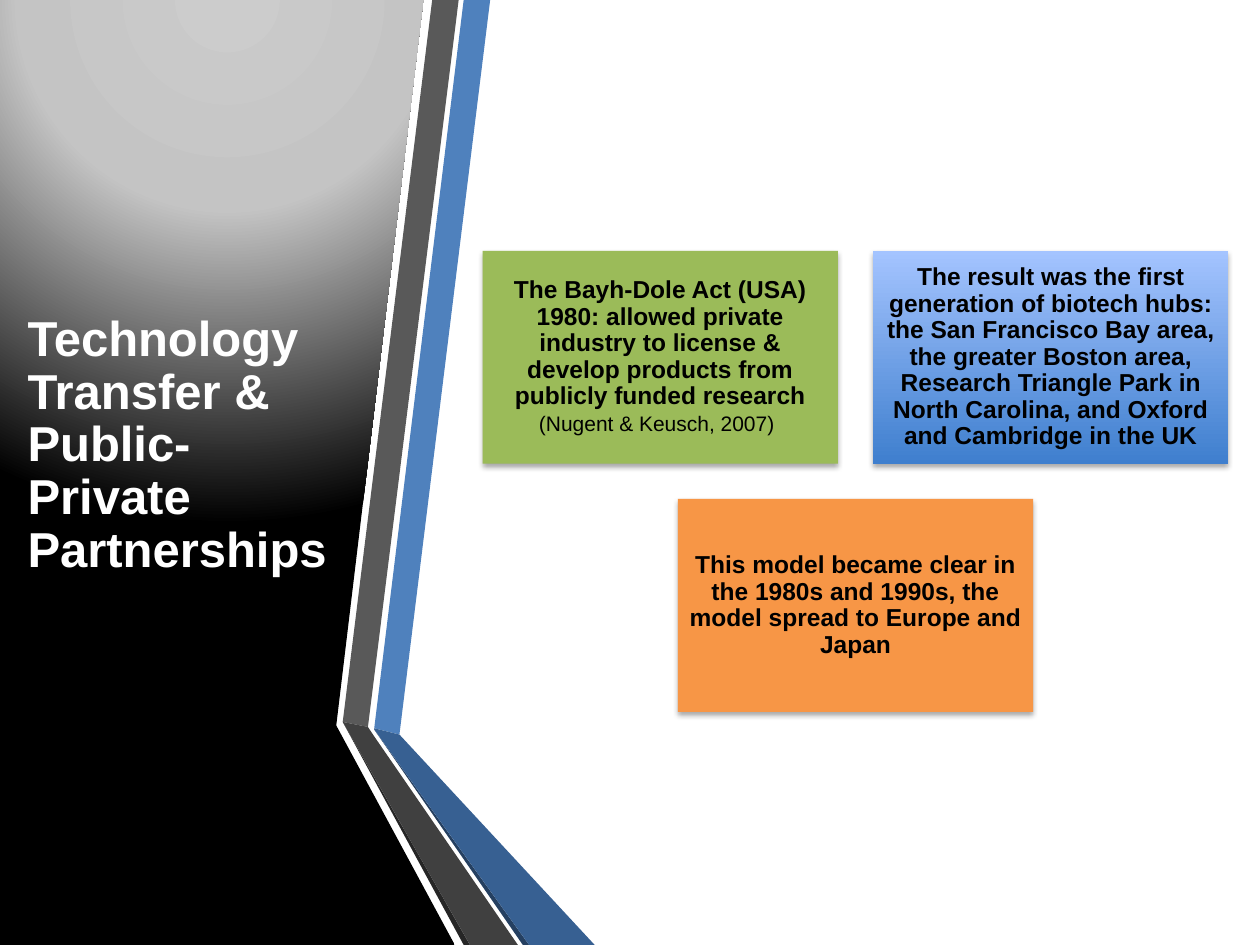
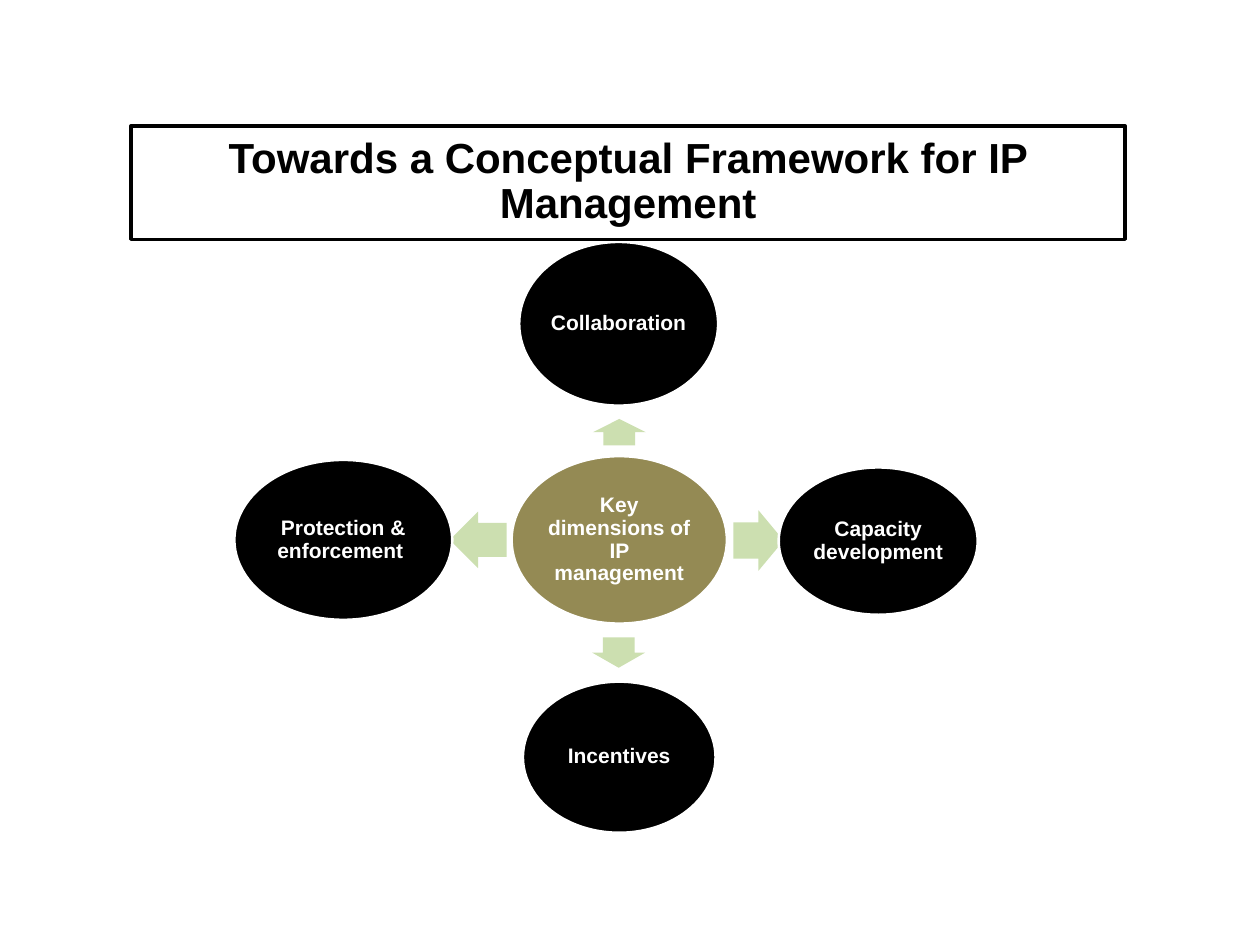
from dataclasses import dataclass
from typing import Optional, Union

from lxml.etree import SubElement
from pptx import Presentation
from pptx.dml.color import RGBColor
from pptx.enum.shapes import MSO_SHAPE
from pptx.enum.text import MSO_ANCHOR, PP_ALIGN
from pptx.oxml import parse_xml
from pptx.oxml.ns import nsdecls, qn
from pptx.util import Pt

PX = 9144
WIDE, HIGH = 1000, 750
FONT = "Arial"

BLACK = RGBColor(0x00, 0x00, 0x00)
WHITE = RGBColor(0xFF, 0xFF, 0xFF)
SILVER = RGBColor(0xCC, 0xCC, 0xCC)
GREY = RGBColor(0xC4, 0xC4, 0xC4)
STONE = RGBColor(0x59, 0x59, 0x59)
COAL = RGBColor(0x40, 0x40, 0x40)
SOOT = RGBColor(0x26, 0x26, 0x26)
BLUE = RGBColor(0x4F, 0x81, 0xBD)
DENIM = RGBColor(0x37, 0x60, 0x92)
NAVY = RGBColor(0x25, 0x40, 0x61)
SKY = RGBColor(0xA4, 0xC4, 0xFF)
AZURE = RGBColor(0x3F, 0x7F, 0xCE)
GREEN = RGBColor(0x9B, 0xBB, 0x59)
MINT = RGBColor(0xCC, 0xDF, 0xB0)
ORANGE = RGBColor(0xF7, 0x96, 0x46)
OLIVE = RGBColor(0x94, 0x8A, 0x54)


@dataclass(frozen=True)
class Grade:
    stops: tuple[tuple[int, RGBColor], ...]
    course: str


Paint = Union[RGBColor, Grade]
GLOW = Grade(
    ((0, SILVER), (40, GREY), (100, BLACK)),
    '<a:path path="circle">'
    '<a:fillToRect l="50000" t="-80000" r="50000" b="180000"/></a:path>',
)
DAWN = Grade(((0, AZURE), (100, SKY)), '<a:lin ang="16200000" scaled="0"/>')


@dataclass(frozen=True)
class Box:
    left: int
    top: int
    width: int
    height: int


@dataclass(frozen=True)
class Run:
    text: str
    size: int
    color: RGBColor
    bold: bool = True


@dataclass(frozen=True)
class Band:
    paint: Paint
    points: tuple[tuple[int, int], ...]


@dataclass(frozen=True)
class Card:
    box: Box
    paint: Paint
    runs: tuple[Run, ...]


@dataclass(frozen=True)
class Node:
    box: Box
    text: str
    paint: RGBColor = BLACK


@dataclass(frozen=True)
class Arrow:
    box: Box
    turn: int


BANDS = (
    Band(GLOW, ((0, 0), (336, 0), (267, 575), (267, 576), (361, 750), (0, 750))),
    Band(BLUE, ((297, 578), (317, 583), (389, 0), (368, 0))),
    Band(STONE, ((364, 0), (343, 0), (272, 573), (292, 577))),
    Band(SOOT, ((272, 573), (368, 750), (373, 750))),
    Band(NAVY, ((297, 579), (415, 750), (420, 750))),
    Band(DENIM, ((297, 579), (420, 750), (472, 750), (317, 583), (297, 578))),
    Band(COAL, ((411, 750), (296, 583), (292, 577), (272, 573), (373, 750))),
)

CARD_W, CARD_H, GAP = 282, 169, 28
LEFT, TOP = 383, 199
STEP = CARD_W + GAP
CARDS = (
    Card(Box(LEFT, TOP, CARD_W, CARD_H), GREEN, (
        Run("The Bayh-Dole Act (USA) 1980: allowed private industry to license "
            "& develop products from publicly funded research ", 14, BLACK),
        Run("(Nugent & Keusch, 2007)", 12, BLACK, False),
        Run(" ", 14, BLACK),
    )),
    Card(Box(LEFT + STEP, TOP, CARD_W, CARD_H), DAWN, (
        Run("The result was the first generation of biotech hubs: the San "
            "Francisco Bay area, the greater Boston area, Research Triangle "
            "Park in North Carolina, and Oxford and Cambridge in the UK",
            14, BLACK),
    )),
    Card(Box(LEFT + STEP // 2, TOP + CARD_H + GAP, CARD_W, CARD_H), ORANGE, (
        Run("This model became clear in the 1980s and 1990s, the model spread "
            "to Europe and Japan", 14, BLACK),
    )),
)

HUB = Node(Box(406, 362, 171, 133), "Key dimensions of IP management", OLIVE)
SPOKES = (
    (Arrow(Box(481, 322, 21, 42), 270), Node(Box(412, 192, 158, 130), "Collaboration")),
    (Arrow(Box(582, 405, 40, 48), 0), Node(Box(618, 371, 158, 117), "Capacity development")),
    (Arrow(Box(479, 497, 24, 42), 90), Node(Box(415, 541, 153, 120), "Incentives")),
    (Arrow(Box(357, 406, 45, 45), 180), Node(Box(186, 365, 173, 127), "Protection & enforcement ")),
)


def span(box: Box) -> tuple[int, ...]:
    return tuple(n * PX for n in (box.left, box.top, box.width, box.height))


def coat(shape, paint: Paint) -> None:
    if isinstance(paint, RGBColor):
        shape.fill.solid()
        shape.fill.fore_color.rgb = paint
        return
    shape.fill.background()
    stops = "".join(
        f'<a:gs pos="{at * 1000}"><a:srgbClr val="{color}"/></a:gs>'
        for at, color in paint.stops
    )
    grad = parse_xml(
        f'<a:gradFill {nsdecls("a")} rotWithShape="1">'
        f"<a:gsLst>{stops}</a:gsLst>{paint.course}</a:gradFill>"
    )
    props = shape._element.spPr
    props.replace(props.find(qn("a:noFill")), grad)


def style(shape, paint: Paint, edge: Optional[RGBColor] = None, weight: float = 0) -> None:
    shape.shadow.inherit = False
    coat(shape, paint)
    if edge is None:
        shape.line.fill.background()
    else:
        shape.line.color.rgb = edge
        shape.line.width = Pt(weight)


def shade(shape) -> None:
    effects = shape._element.spPr.find(qn("a:effectLst"))
    cast = SubElement(effects, qn("a:outerShdw"), blurRad="40000",
                      dist="23000", dir="5400000", rotWithShape="0")
    color = SubElement(cast, qn("a:srgbClr"), val=str(BLACK))
    SubElement(color, qn("a:alpha"), val="35000")


def write(shape, runs: tuple[Run, ...], align=PP_ALIGN.CENTER,
          inset: Optional[int] = None) -> None:
    frame = shape.text_frame
    frame.word_wrap = True
    frame.vertical_anchor = MSO_ANCHOR.MIDDLE
    if inset is not None:
        frame.margin_left = frame.margin_right = inset * PX
        frame.margin_top = frame.margin_bottom = inset * PX
    para = frame.paragraphs[0]
    para.alignment = align
    para.line_spacing = 0.9
    for item in runs:
        run = para.add_run()
        run.text = item.text
        font = run.font
        font.name = FONT
        font.size = Pt(item.size)
        font.bold = item.bold
        font.color.rgb = item.color


def draw_band(slide, band: Band) -> None:
    pen = slide.shapes.build_freeform(*band.points[0], scale=PX)
    pen.add_line_segments(band.points[1:], close=True)
    style(pen.convert_to_shape(), band.paint)


def draw_card(slide, card: Card) -> None:
    shape = slide.shapes.add_shape(MSO_SHAPE.RECTANGLE, *span(card.box))
    style(shape, card.paint)
    shade(shape)
    write(shape, card.runs, inset=6)


def draw_node(slide, node: Node) -> None:
    shape = slide.shapes.add_shape(MSO_SHAPE.OVAL, *span(node.box))
    style(shape, node.paint, WHITE, 1.5)
    write(shape, (Run(node.text, 12, WHITE),), inset=2)


def draw_arrow(slide, arrow: Arrow) -> None:
    shape = slide.shapes.add_shape(MSO_SHAPE.RIGHT_ARROW, *span(arrow.box))
    shape.adjustments[0] = 0.6
    shape.adjustments[1] = 0.5
    shape.rotation = arrow.turn
    style(shape, MINT)


def build_hubs(slide) -> None:
    for band in BANDS:
        draw_band(slide, band)
    title = slide.shapes.add_textbox(*span(Box(12, 75, 268, 558)))
    write(title, (Run("Technology Transfer & Public-Private Partnerships", 28, WHITE),),
          PP_ALIGN.LEFT)
    for card in CARDS:
        draw_card(slide, card)


def build_frame(slide) -> None:
    draw_node(slide, HUB)
    for arrow, node in SPOKES:
        draw_arrow(slide, arrow)
        draw_node(slide, node)
    title = slide.shapes.add_shape(MSO_SHAPE.RECTANGLE, *span(Box(104, 100, 789, 90)))
    style(title, WHITE, BLACK, 2)
    write(title, (Run("Towards a Conceptual Framework for IP Management", 24, BLACK),))


def main() -> None:
    deck = Presentation()
    deck.slide_width = WIDE * PX
    deck.slide_height = HIGH * PX
    for build in (build_hubs, build_frame):
        build(deck.slides.add_slide(deck.slide_layouts[6]))
    deck.save("out.pptx")


if __name__ == "__main__":
    main()
